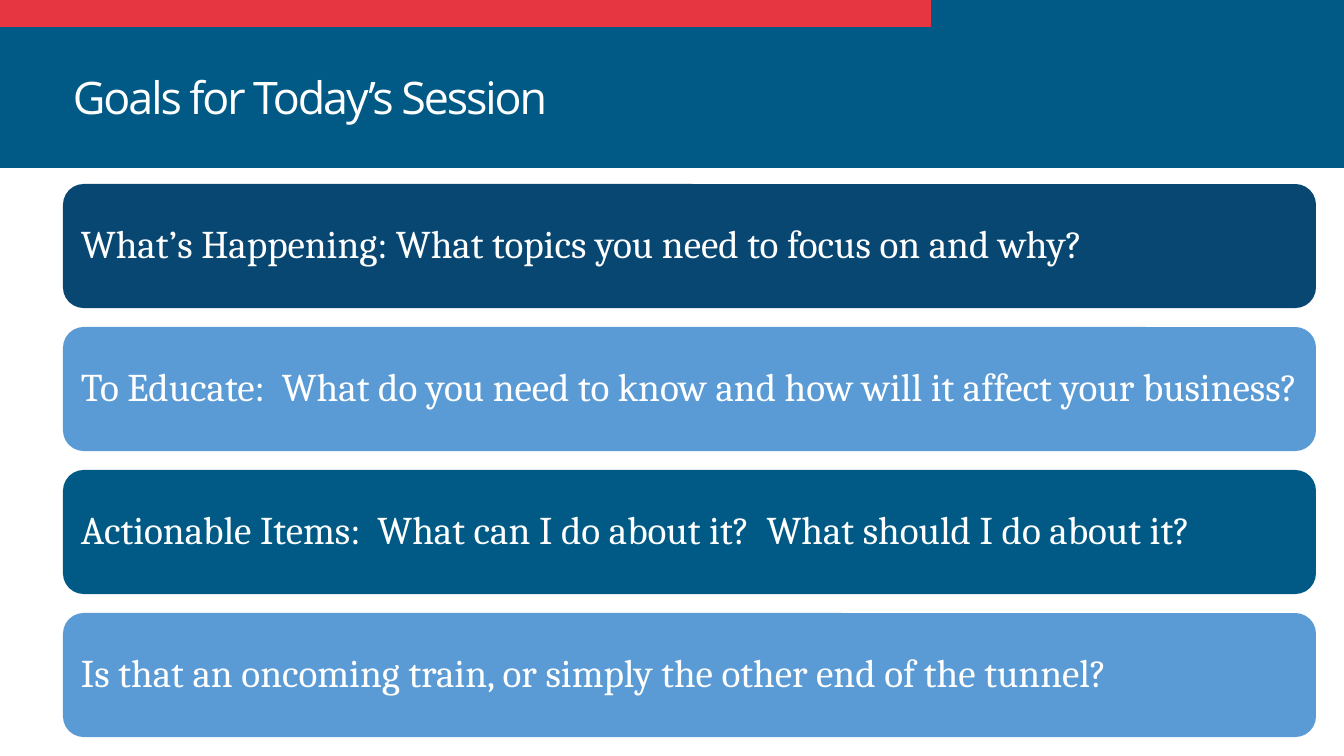
import pptx
import pptx.dml.color
import pptx.enum.shapes
import pptx.enum.text
import pptx.util

TITLE = "Goals for Today’s Session"
GOALS = [
    ("What’s Happening: What topics you need to focus on and why?", "084772"),
    ("To Educate:  What do you need to know and how will it affect your business?", "5B9BD5"),
    ("Actionable Items:  What can I do about it?  What should I do about it?", "005A85"),
    ("Is that an oncoming train, or simply the other end of the tunnel?", "5B9BD5"),
]
HEADER_BANDS = [
    ((0, 0, 1344, 168), "005A85"),
    ((0, 0, 931, 27), "E63641"),
]
TITLE_BOX = (63, 27, 1159, 146)
GOAL_LEFT, GOAL_TOP, GOAL_WIDTH, GOAL_HEIGHT, GOAL_PITCH = 63, 184, 1253, 124, 143
GOAL_INSET = 12
SHAPES = pptx.enum.shapes.MSO_SHAPE


def px(length):
    return round(length * 914400 / 100.8)


def color(value):
    return pptx.dml.color.RGBColor.from_string(value)


def add_filled_shape(slide, kind, box, fill):
    shape = slide.shapes.add_shape(kind, *map(px, box))
    shape.shadow.inherit = False
    shape.fill.solid()
    shape.fill.fore_color.rgb = color(fill)
    shape.line.fill.background()
    return shape


def set_text(shape, text, font_name, size):
    frame = shape.text_frame
    frame.text = text
    frame.word_wrap = True
    frame.vertical_anchor = pptx.enum.text.MSO_ANCHOR.MIDDLE
    paragraph = frame.paragraphs[0]
    paragraph.alignment = pptx.enum.text.PP_ALIGN.LEFT
    paragraph.line_spacing = 0.9
    run = paragraph.runs[0]
    run.font.name = font_name
    run.font.size = pptx.util.Pt(size)
    run.font.color.rgb = color("FFFFFF")
    return run


def main():
    presentation = pptx.Presentation()
    presentation.slide_width = px(1344)
    presentation.slide_height = px(756)
    slide = presentation.slides.add_slide(presentation.slide_layouts[6])

    for box, fill in HEADER_BANDS:
        add_filled_shape(slide, SHAPES.RECTANGLE, box, fill)

    title = slide.shapes.add_textbox(*map(px, TITLE_BOX))
    title_run = set_text(title, TITLE, "Open Sans", 32)
    title_run._r.get_or_add_rPr().set("spc", "-150")

    for index, (text, fill) in enumerate(GOALS):
        box = (GOAL_LEFT, GOAL_TOP + index * GOAL_PITCH, GOAL_WIDTH, GOAL_HEIGHT)
        goal = add_filled_shape(slide, SHAPES.ROUNDED_RECTANGLE, box, fill)
        set_text(goal, text, "Cambria", 28)
        frame = goal.text_frame
        frame.margin_left = frame.margin_top = frame.margin_bottom = px(GOAL_INSET)
        frame.margin_right = px(GOAL_INSET // 2)

    presentation.save("out.pptx")


if __name__ == "__main__":
    main()
